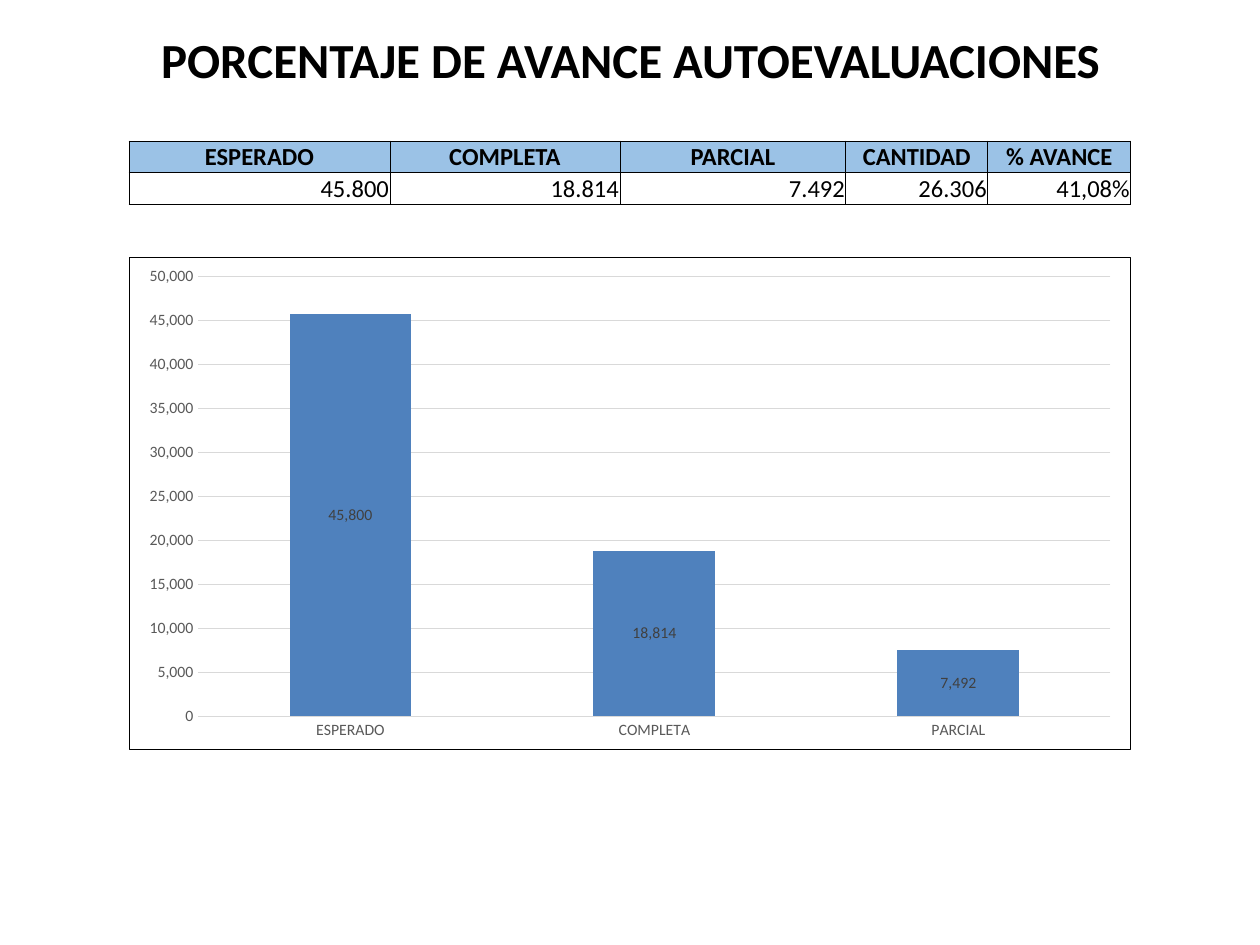
"""Build a slide with a progress table and a column chart."""
import pptx
import pptx.chart.data
import pptx.dml.color
import pptx.enum.chart
import pptx.enum.shapes
import pptx.enum.text
import pptx.oxml
import pptx.oxml.ns
import pptx.util

SCALE = 914400 / 126
FONT = "Calibri"
ALIGN = pptx.enum.text.PP_ALIGN
HEADS = ["ESPERADO", "COMPLETA", "PARCIAL", "CANTIDAD", "% AVANCE"]
ROW = ["45.800", "18.814", "7.492", "26.306", "41,08%"]
WIDTHS = [261, 230, 226, 142, 143]
VALUES = [45800, 18814, 7492]


def px(*nums):
    """Turn pixel lengths into EMU."""
    return [pptx.util.Emu(round(n * SCALE)) for n in nums]


def color(code):
    """Turn a hex string into a colour."""
    return pptx.dml.color.RGBColor.from_string(code)


def style(font, size, code, bold=False):
    """Set the look of a font."""
    font.name = FONT
    font.size = pptx.util.Pt(size)
    font.bold = bold
    font.color.rgb = color(code)


def paint(fill, code):
    """Fill with one solid colour."""
    fill.solid()
    fill.fore_color.rgb = color(code)


def write(frame, text, size=14, code="000000", bold=False, align=ALIGN.CENTER):
    """Put one formatted line in a text frame."""
    para = frame.paragraphs[0]
    para.alignment = align
    run = para.add_run()
    run.text = text
    style(run.font, size, code, bold)


def line(tag, width, code):
    """Make the XML of a solid line."""
    return (f'<{tag} {pptx.oxml.ns.nsdecls("a")} w="{pptx.util.Pt(width)}">'
            f'<a:solidFill><a:srgbClr val="{code}"/></a:solidFill></{tag}>')


def add_title(slide, text, box):
    """Add the rounded title bar."""
    kind = pptx.enum.shapes.MSO_SHAPE.ROUND_2_DIAG_RECTANGLE
    bar = slide.shapes.add_shape(kind, *px(*box))
    bar.shadow.inherit = False
    paint(bar.fill, "FFFFFF")
    bar.line.fill.background()
    bar.text_frame.vertical_anchor = pptx.enum.text.MSO_ANCHOR.MIDDLE
    write(bar.text_frame, text, size=28, bold=True)


def set_cell(cell, text, head):
    """Write, fill and frame one table cell."""
    cell.margin_left, cell.margin_right, cell.margin_top, cell.margin_bottom = px(1, 1, 1, 0)
    cell.vertical_anchor = pptx.enum.text.MSO_ANCHOR.BOTTOM
    write(cell.text_frame, text, bold=head, align=ALIGN.CENTER if head else ALIGN.RIGHT)
    props = cell._tc.get_or_add_tcPr()
    for side in "LRTB":
        props.append(pptx.oxml.parse_xml(line(f"a:ln{side}", 0.5, "000000")))
    if head:
        paint(cell.fill, "9BC2E6")
    else:
        cell.fill.background()


def add_grid(slide, rows, box):
    """Add the table, with its first row as the head."""
    grid = slide.shapes.add_table(len(rows), len(WIDTHS), *px(*box)).table
    grid.horz_banding = False
    for col, width in zip(grid.columns, px(*WIDTHS)):
        col.width = width
    for r, row in enumerate(rows):
        for c, text in enumerate(row):
            set_cell(grid.cell(r, c), text, r == 0)


def set_axis(axis):
    """Drop ticks and line, and style the labels."""
    axis.major_tick_mark = pptx.enum.chart.XL_TICK_MARK.NONE
    axis.minor_tick_mark = pptx.enum.chart.XL_TICK_MARK.NONE
    axis.format.line.fill.background()
    style(axis.tick_labels.font, 9, "595959")


def set_scale(axis):
    """Set range, number format and gridlines of the value axis."""
    axis.minimum_scale, axis.maximum_scale, axis.major_unit = 0, 50000, 5000
    axis.tick_labels.number_format = "#,##0"
    axis.tick_labels.number_format_is_linked = False
    rule = axis.major_gridlines.format.line
    rule.color.rgb = color("D9D9D9")
    rule.width = pptx.util.Pt(0.75)


def set_plot(plot):
    """Style the columns and their labels."""
    plot.gap_width, plot.overlap = 150, 100
    plot.vary_by_categories = False
    paint(plot.series[0].format.fill, "4F81BD")
    tags = plot.series[0].data_labels
    tags.show_value = True
    tags.number_format = "#,##0"
    tags.number_format_is_linked = False
    style(tags.font, 9, "404040")


def add_bars(slide, box):
    """Add the column chart with its border."""
    data = pptx.chart.data.CategoryChartData(number_format="#,##0")
    data.categories = HEADS[:len(VALUES)]
    data.add_series("Series 1", VALUES)
    kind = pptx.enum.chart.XL_CHART_TYPE.COLUMN_STACKED
    chart = slide.shapes.add_chart(kind, *px(*box), data).chart
    chart.has_title = chart.has_legend = False
    style(chart.font, 10, "000000")
    set_axis(chart.category_axis)
    set_axis(chart.value_axis)
    set_scale(chart.value_axis)
    set_plot(chart.plots[0])
    frame = (f'<c:spPr {pptx.oxml.ns.nsdecls("c", "a")}><a:noFill/>'
             f'{line("a:ln", 0.75, "000000")}</c:spPr>')
    space = chart._chartSpace
    space.find(pptx.oxml.ns.qn("c:chart")).addnext(pptx.oxml.parse_xml(frame))


def main():
    """Build and save the slide."""
    deck = pptx.Presentation()
    deck.slide_width, deck.slide_height = px(1260, 945)
    slide = deck.slides.add_slide(deck.slide_layouts[6])
    add_title(slide, "PORCENTAJE DE AVANCE AUTOEVALUACIONES", (1, 27, 1259, 64))
    add_grid(slide, [HEADS, ROW], (129, 141, sum(WIDTHS), 63))
    add_bars(slide, (129, 257, sum(WIDTHS), 493))
    deck.save("out.pptx")


if __name__ == "__main__":
    main()
